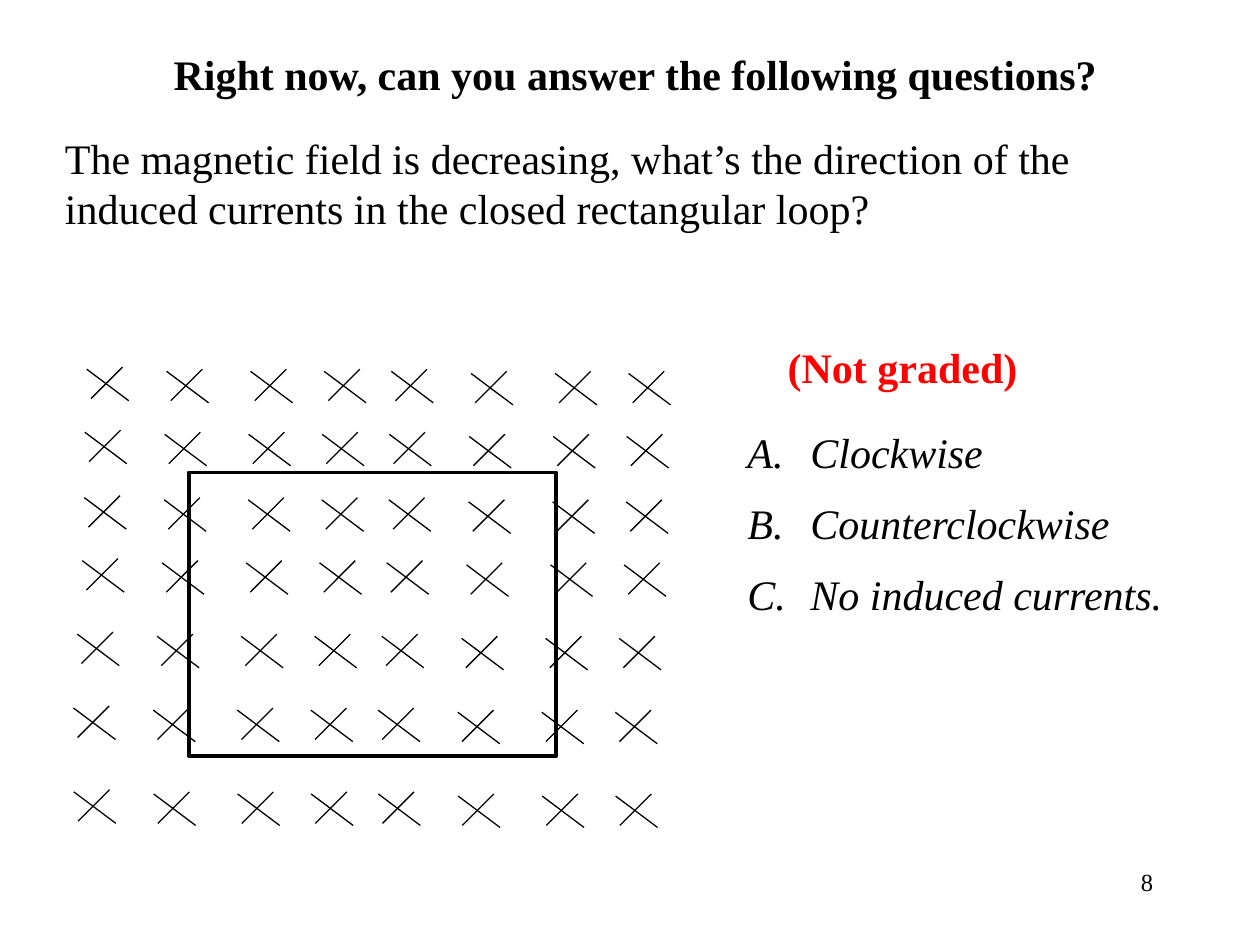
from lxml import etree
from pptx import Presentation
from pptx.dml.color import RGBColor
from pptx.enum.shapes import MSO_CONNECTOR, MSO_SHAPE
from pptx.enum.text import PP_ALIGN
from pptx.oxml.ns import qn
from pptx.util import Pt

STRAIGHT = MSO_CONNECTOR.STRAIGHT
RECTANGLE = MSO_SHAPE.RECTANGLE
LEFT, CENTER, RIGHT = PP_ALIGN.LEFT, PP_ALIGN.CENTER, PP_ALIGN.RIGHT
FONT = "Times New Roman"
BLACK, RED = "000000", "FF0000"

ROW_STARTS = [(7.6, 8.8), (6.5, 44.8), (6.2, 82.2), (5, 118.2),
              (2.2, 160.2), (0, 202.4), (0.2, 250.3)]
COLUMN_OFFSETS = [(0, 0), (45.6, 1.2), (93.6, 1.2), (135.6, 1.2),
                  (174, 1.2), (219.6, 2.4), (267.6, 2.4), (309.6, 2.4)]
CROSS_STROKES = [(0, 0, 24, 18), (20.4, -1.2, 2.4, 16.8)]


def color(value):
    """Turn a hex string into a colour."""
    return RGBColor.from_string(value)


def add_text(slide, box, lines, size=24, ink=BLACK, align=LEFT,
             bold=False, italic=False, space_before=0):
    """Add a wrapped text box with one paragraph per line."""
    shape = slide.shapes.add_textbox(*map(Pt, box))
    shape.text_frame.word_wrap = True
    shape.text_frame.text = "\n".join(lines)
    for paragraph in shape.text_frame.paragraphs:
        paragraph.alignment = align
        paragraph.space_before = Pt(space_before)
        for run in paragraph.runs:
            run.font.name = FONT
            run.font.size = Pt(size)
            run.font.bold = bold
            run.font.italic = italic
            run.font.color.rgb = color(ink)
    return shape


def add_answers(slide, box, answers):
    """Add the lettered answer list."""
    shape = add_text(slide, box, answers, italic=True, space_before=12)
    for paragraph in shape.text_frame.paragraphs:
        properties = paragraph._p.get_or_add_pPr()
        properties.set("marL", str(Pt(36)))
        properties.set("indent", str(-Pt(36)))
        bullet_font = etree.SubElement(properties, qn("a:buFont"))
        bullet_font.set("typeface", FONT)
        numbering = etree.SubElement(properties, qn("a:buAutoNum"))
        numbering.set("type", "alphaUcPeriod")


def add_cross(shapes, left, top):
    """Draw one field line pointing into the page."""
    for x1, y1, x2, y2 in CROSS_STROKES:
        line = shapes.add_connector(STRAIGHT, Pt(left + x1), Pt(top + y1),
                                    Pt(left + x2), Pt(top + y2))
        line.line.color.rgb = color(BLACK)
        line.line.width = Pt(0.75)
        etree.SubElement(line._element.spPr, qn("a:effectLst"))


def add_field(slide, left, top):
    """Draw the magnetic field and the rectangular loop inside it."""
    shapes = slide.shapes.add_group_shape().shapes
    for column_x, column_y in COLUMN_OFFSETS:
        for row_x, row_y in ROW_STARTS:
            add_cross(shapes, left + row_x + column_x, top + row_y + column_y)
    loop = shapes.add_shape(RECTANGLE, Pt(left + 66), Pt(top + 67.8),
                            Pt(210), Pt(162))
    loop.shadow.inherit = False
    loop.fill.background()
    loop.line.color.rgb = color(BLACK)
    loop.line.width = Pt(2.25)


def main():
    """Build and save the question slide."""
    presentation = Presentation()
    presentation.slide_width, presentation.slide_height = Pt(720), Pt(540)
    slide = presentation.slides.add_slide(presentation.slide_layouts[6])
    add_text(slide, (90, 24, 546, 36),
             ["Right now, can you answer the following questions? "],
             align=CENTER, bold=True, space_before=12)
    add_field(slide, 42, 202.2)
    add_text(slide, (30, 72, 666, 65),
             ["The magnetic field is decreasing, what’s the direction of the "
              "induced currents in the closed rectangular loop?"],
             space_before=12)
    add_answers(slide, (420, 240, 300, 122),
                ["Clockwise", "Counterclockwise", "No induced currents."])
    add_text(slide, (443, 191.5, 240, 36), ["(Not graded)"], ink=RED, bold=True)
    add_text(slide, (516, 492, 150, 36), ["8"], size=14, align=RIGHT)
    presentation.save("out.pptx")


if __name__ == "__main__":
    main()
